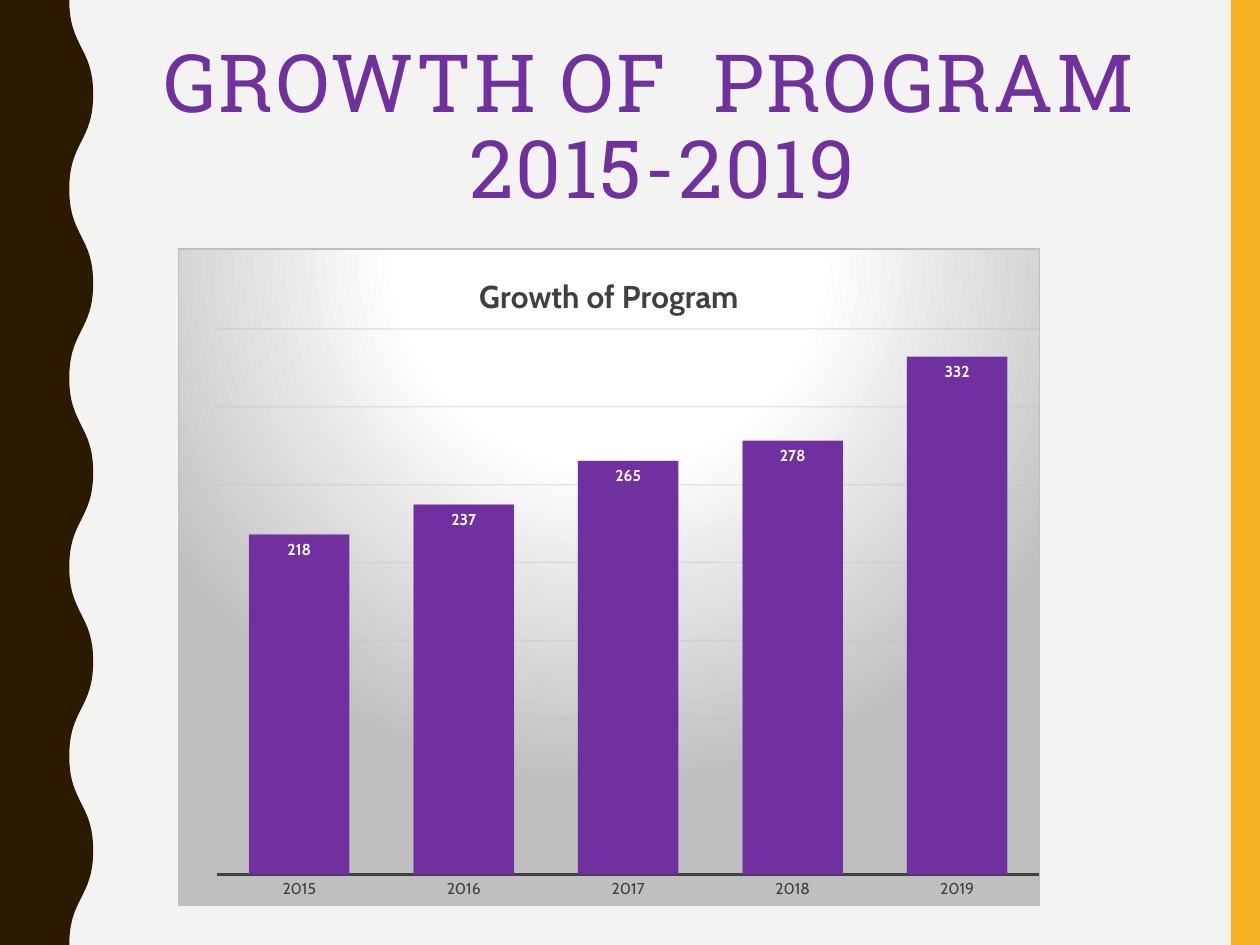
from dataclasses import dataclass

from pptx import Presentation
from pptx.chart.data import CategoryChartData
from pptx.dml.color import RGBColor
from pptx.enum.chart import XL_CHART_TYPE as ChartType
from pptx.enum.chart import XL_LABEL_POSITION as LabelPos
from pptx.enum.chart import XL_TICK_MARK as TickMark
from pptx.enum.shapes import MSO_SHAPE as Shape
from pptx.enum.text import MSO_ANCHOR as Anchor
from pptx.enum.text import PP_ALIGN as Align
from pptx.oxml import parse_xml
from pptx.oxml.ns import nsdecls, qn
from pptx.util import Inches, Pt

COLORS = {
    "paper": "F3F3F2",
    "gold": "F8B323",
    "brown": "2A1A00",
    "purple": "7030A0",
    "text": "404040",
    "grid": "0D0D0D",
    "white": "FFFFFF",
    "silver": "BFBFBF",
}
TITLE_FONT = "Roboto Slab"
CHART_FONT = "Cabin"


@dataclass(frozen=True)
class Box:
    left: float
    top: float
    width: float
    height: float

    def emu(self) -> tuple:
        return tuple(Inches(v) for v in (self.left, self.top, self.width, self.height))


@dataclass(frozen=True)
class Count:
    year: str
    total: int


@dataclass(frozen=True)
class Stop:
    pos: int
    color: str
    alpha: int = 100


COUNTS = [
    Count("2015", 218),
    Count("2016", 237),
    Count("2017", 265),
    Count("2018", 278),
    Count("2019", 332),
]


def rgb(name: str) -> RGBColor:
    return RGBColor.from_string(COLORS[name])


def set_font(font, size: float, color: str, bold: bool = False, name: str = CHART_FONT) -> None:
    font.size, font.bold, font.name = Pt(size), bold, name
    font.color.rgb = rgb(color)


def set_line(line, color: str, width: float) -> None:
    line.color.rgb = rgb(color)
    line.width = Pt(width)


def paint(s, color: str) -> None:
    s.shadow.inherit = False
    s.fill.solid()
    s.fill.fore_color.rgb = rgb(color)
    s.line.fill.background()


def gradient(stops: list[Stop], direction: str) -> str:
    items = "".join(
        f'<a:gs pos="{s.pos * 1000}"><a:srgbClr val="{COLORS[s.color]}">'
        f'<a:alpha val="{s.alpha * 1000}"/></a:srgbClr></a:gs>'
        for s in stops
    )
    return f'<a:gradFill {nsdecls("a")}><a:gsLst>{items}</a:gsLst>{direction}</a:gradFill>'


def add_wave(slide, low: float, high: float, step: float, count: int) -> None:
    knots = [(high if i % 2 else low, i * step) for i in range(count + 1)]
    points = [(Inches(x), Inches(y)) for x, y in knots]
    fb = slide.shapes.build_freeform(*points[0])
    fb.add_line_segments(points[1:] + [(0, Inches(7.5)), (0, 0)], close=True)
    s = fb.convert_to_shape()
    paint(s, "brown")
    segments = s._element.findall(".//" + qn("a:lnTo"))[:count]
    for segment, (x0, y0), (x1, y1) in zip(segments, points, points[1:]):
        middle = (y0 + y1) // 2
        pts = "".join(
            f'<a:pt x="{x}" y="{y}"/>' for x, y in ((x0, middle), (x1, middle), (x1, y1))
        )
        curve = parse_xml(f'<a:cubicBezTo {nsdecls("a")}>{pts}</a:cubicBezTo>')
        segment.getparent().replace(segment, curve)


def add_title(slide, box: Box, lines: list[str]) -> None:
    tf = slide.shapes.add_textbox(*box.emu()).text_frame
    tf.word_wrap = True
    tf.vertical_anchor = Anchor.TOP
    tf.margin_top = Inches(0.03)
    p = tf.paragraphs[0]
    p.alignment = Align.CENTER
    p.line_spacing = 0.9
    for i, line in enumerate(lines):
        if i:
            p.add_line_break()
        r = p.add_run()
        r.text = line
        set_font(r.font, 45.9, "purple", name=TITLE_FONT)
        r.font._element.set("spc", "150")


def set_background(chart) -> None:
    stops = [Stop(0, "white"), Stop(39, "white"), Stop(100, "silver")]
    fill = gradient(stops, (
        '<a:path path="circle">'
        '<a:fillToRect l="50000" t="-80000" r="50000" b="180000"/></a:path>'
    ))
    chart._chartSpace.chart.addnext(parse_xml(
        f'<c:spPr {nsdecls("c", "a")}>{fill}<a:ln w="{Pt(0.75)}"><a:solidFill>'
        f'<a:srgbClr val="{COLORS["silver"]}"/></a:solidFill></a:ln></c:spPr>'
    ))


def set_plot_area(chart, area: Box) -> None:
    plot_area = chart._chartSpace.chart.plotArea
    for old in plot_area.findall(qn("c:layout")):
        plot_area.remove(old)
    sizes = zip("xywh", (area.left, area.top, area.width, area.height))
    values = "".join(f'<c:{key} val="{value}"/>' for key, value in sizes)
    plot_area.insert(0, parse_xml(
        f'<c:layout {nsdecls("c")}><c:manualLayout><c:layoutTarget val="inner"/>'
        f'<c:xMode val="edge"/><c:yMode val="edge"/>{values}</c:manualLayout></c:layout>'
    ))


def add_growth_chart(slide, box: Box, counts: list[Count]) -> None:
    data = CategoryChartData()
    data.categories = [c.year for c in counts]
    data.add_series("Series 1", [c.total for c in counts])
    chart = slide.shapes.add_chart(ChartType.COLUMN_CLUSTERED, *box.emu(), data).chart
    chart.has_legend = False
    chart.font.size, chart.font.name = Pt(10), CHART_FONT

    chart.has_title = True
    r = chart.chart_title.text_frame.paragraphs[0].add_run()
    r.text = "Growth of Program"
    set_font(r.font, 18, "text", bold=True)
    chart.chart_title.include_in_layout = False

    years = chart.category_axis
    years.major_tick_mark = years.minor_tick_mark = TickMark.NONE
    set_font(years.tick_labels.font, 9, "text")
    set_line(years.format.line, "text", 1.5)

    totals = chart.value_axis
    totals.minimum_scale, totals.maximum_scale, totals.major_unit = 0, 350, 50
    totals.has_major_gridlines = True
    grid = totals.major_gridlines.format.line
    set_line(grid, "grid", 0.75)
    solid = grid.fill._xPr.find(qn("a:solidFill"))
    fade = gradient([Stop(0, "silver", 36), Stop(100, "grid", 42)], '<a:lin ang="5400000"/>')
    solid.getparent().replace(solid, parse_xml(fade))
    totals.visible = False

    plot = chart.plots[0]
    plot.gap_width = 65
    plot.vary_by_categories = False
    bars = plot.series[0]
    bars.format.fill.solid()
    bars.format.fill.fore_color.rgb = rgb("purple")
    set_line(bars.format.line, "purple", 0.75)
    color = bars.format.line.fill._xPr.find(".//" + qn("a:srgbClr"))
    color.append(parse_xml(f'<a:alpha {nsdecls("a")} val="50000"/>'))
    labels = bars.data_labels
    labels.show_value = True
    labels.position = LabelPos.INSIDE_END
    set_font(labels.font, 9, "white", bold=True)

    set_background(chart)
    set_plot_area(chart, Box(0.045, 0.122, 0.955, 0.831))


def main() -> None:
    prs = Presentation()
    prs.slide_width, prs.slide_height = Inches(10), Inches(7.5)
    slide = prs.slides.add_slide(prs.slide_layouts[6])
    slide.background.fill.solid()
    slide.background.fill.fore_color.rgb = rgb("paper")
    paint(slide.shapes.add_shape(Shape.RECTANGLE, *Box(9.77, 0, 0.23, 7.5).emu()), "gold")
    add_wave(slide, 0.55, 0.74, 0.75, 10)
    add_title(slide, Box(0.71, 0.31, 9.09, 1.15), ["GROWTH OF  PROGRAM ", "2015-2019"])
    add_growth_chart(slide, Box(1.41, 1.97, 6.85, 5.22), COUNTS)
    prs.save("out.pptx")


if __name__ == "__main__":
    main()
